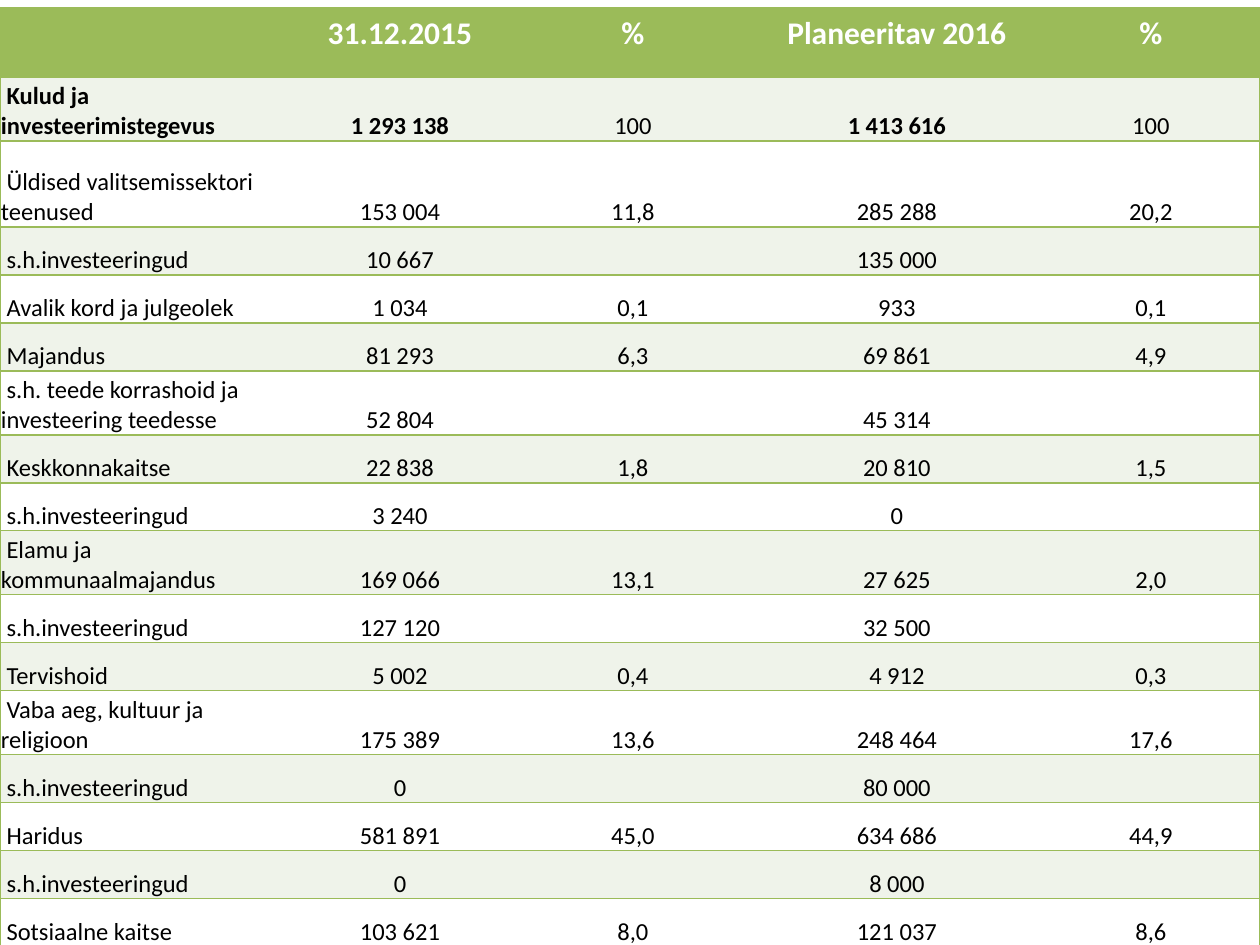
import lxml.etree
import pptx
import pptx.dml.color
import pptx.enum.text
import pptx.oxml.ns
import pptx.util

PX = 914400 // 126
THEME = {
    "font": "Calibri",
    "green": "9BBB59",
    "band": "EFF3EA",
    "white": "FFFFFF",
    "black": "000000",
    "header_size": 18,
    "body_size": 14,
    "border_width": 1,
}
COLUMN_WIDTHS = [286, 228, 238, 290, 218]
HEADER_HEIGHT, SINGLE_HEIGHT, DOUBLE_HEIGHT, TALL_HEIGHT = 69, 48, 64, 86
NO_STYLE = "{2D5ABB26-0587-4C30-8999-92F81FD0307C}"

INVESTMENTS = "s.h.investeeringud"
BUDGET = [
    (HEADER_HEIGHT, ["", "31.12.2015", "%", "Planeeritav 2016", "%"]),
    (DOUBLE_HEIGHT, ["Kulud ja investeerimistegevus", "1 293 138", "100", "1 413 616", "100"]),
    (TALL_HEIGHT, ["Üldised valitsemissektori teenused", "153 004", "11,8", "285 288", "20,2"]),
    (SINGLE_HEIGHT, [INVESTMENTS, "10 667", "", "135 000", ""]),
    (SINGLE_HEIGHT, ["Avalik kord ja julgeolek", "1 034", "0,1", "933", "0,1"]),
    (SINGLE_HEIGHT, ["Majandus", "81 293", "6,3", "69 861", "4,9"]),
    (DOUBLE_HEIGHT, ["s.h. teede korrashoid ja investeering teedesse", "52 804", "", "45 314", ""]),
    (SINGLE_HEIGHT, ["Keskkonnakaitse", "22 838", "1,8", "20 810", "1,5"]),
    (SINGLE_HEIGHT, [INVESTMENTS, "3 240", "", "0", ""]),
    (DOUBLE_HEIGHT, ["Elamu ja kommunaalmajandus", "169 066", "13,1", "27 625", "2,0"]),
    (SINGLE_HEIGHT, [INVESTMENTS, "127 120", "", "32 500", ""]),
    (SINGLE_HEIGHT, ["Tervishoid", "5 002", "0,4", "4 912", "0,3"]),
    (DOUBLE_HEIGHT, ["Vaba aeg, kultuur ja religioon", "175 389", "13,6", "248 464", "17,6"]),
    (SINGLE_HEIGHT, [INVESTMENTS, "0", "", "80 000", ""]),
    (SINGLE_HEIGHT, ["Haridus", "581 891", "45,0", "634 686", "44,9"]),
    (SINGLE_HEIGHT, [INVESTMENTS, "0", "", "8 000", ""]),
    (SINGLE_HEIGHT, ["Sotsiaalne kaitse", "103 621", "8,0", "121 037", "8,6"]),
]


def color(name):
    return pptx.dml.color.RGBColor.from_string(THEME[name])


def add_borders(cell, sides):
    """Draw green lines on the given sides, listed in L, R, T, B order."""
    properties = cell._tc.get_or_add_tcPr()
    for position, side in enumerate(sides):
        line = lxml.etree.Element(pptx.oxml.ns.qn(f"a:ln{side}"))
        line.set("w", str(pptx.util.Pt(THEME["border_width"])))
        fill = lxml.etree.SubElement(line, pptx.oxml.ns.qn("a:solidFill"))
        lxml.etree.SubElement(fill, pptx.oxml.ns.qn("a:srgbClr")).set("val", THEME["green"])
        properties.insert(position, line)


presentation = pptx.Presentation()
presentation.slide_width = 1260 * PX
presentation.slide_height = 945 * PX
slide = presentation.slides.add_slide(presentation.slide_layouts[6])

table_height = sum(height for height, _ in BUDGET)
table = slide.shapes.add_table(
    len(BUDGET), len(COLUMN_WIDTHS), 0, 8 * PX, 1260 * PX, table_height * PX
).table
table._tbl.tblPr.find(pptx.oxml.ns.qn("a:tableStyleId")).text = NO_STYLE
for column, width in zip(table.columns, COLUMN_WIDTHS):
    column.width = width * PX

last_column = len(COLUMN_WIDTHS) - 1
body_format = {
    "vertical_anchor": pptx.enum.text.MSO_ANCHOR.BOTTOM,
    "margin_left": PX,
    "margin_right": PX,
    "margin_top": PX,
    "margin_bottom": 0,
}
for row_index, (height, texts) in enumerate(BUDGET):
    table.rows[row_index].height = height * PX
    is_header = row_index == 0
    fill_name = "green" if is_header else "band" if row_index % 2 else "white"
    for column_index, text in enumerate(texts):
        cell = table.cell(row_index, column_index)
        cell.fill.solid()
        cell.fill.fore_color.rgb = color(fill_name)
        left = "L" if column_index == 0 else ""
        right = "R" if column_index == last_column else ""
        add_borders(cell, left + right + "TB")
        if not is_header:
            for name, value in body_format.items():
                setattr(cell, name, value)
        if not text:
            continue

        is_label = column_index == 0
        paragraph = cell.text_frame.paragraphs[0]
        alignment = pptx.enum.text.PP_ALIGN
        paragraph.alignment = alignment.LEFT if is_label else alignment.CENTER
        run = paragraph.add_run()
        run.text = f" {text}" if is_label else text
        is_total = row_index == 1 and column_index in (0, 1, 3)
        font_format = {
            "name": THEME["font"],
            "size": pptx.util.Pt(THEME["header_size" if is_header else "body_size"]),
            "bold": is_header or is_total,
        }
        for name, value in font_format.items():
            setattr(run.font, name, value)
        run.font.color.rgb = color("white" if is_header else "black")

presentation.save("out.pptx")
